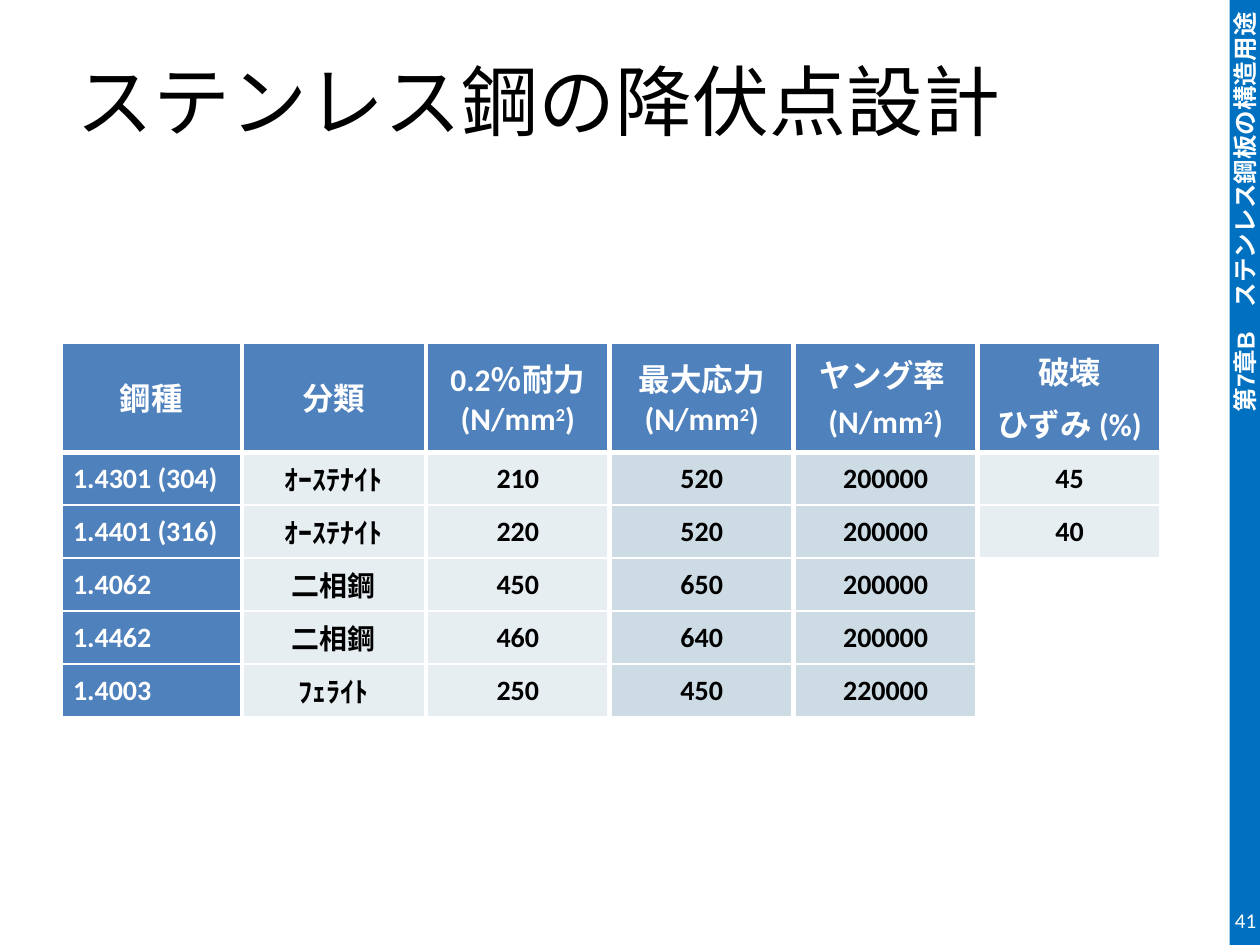
from lxml import etree
from pptx import Presentation
from pptx.dml.color import RGBColor
from pptx.enum.shapes import MSO_SHAPE
from pptx.enum.text import MSO_ANCHOR, PP_ALIGN
from pptx.oxml.ns import qn
from pptx.util import Inches, Pt

LEFT, CENTER, RIGHT = PP_ALIGN.LEFT, PP_ALIGN.CENTER, PP_ALIGN.RIGHT
MIDDLE = MSO_ANCHOR.MIDDLE
RECTANGLE = MSO_SHAPE.RECTANGLE

WHITE = RGBColor(0xFF, 0xFF, 0xFF)
BLACK = RGBColor(0x00, 0x00, 0x00)
SIDEBAR_BLUE = RGBColor(0x00, 0x70, 0xC0)
HEADER_BLUE = RGBColor(0x4F, 0x81, 0xBD)
PALE_BLUE = RGBColor(0xE7, 0xEE, 0xF2)
MID_BLUE = RGBColor(0xCC, 0xDB, 0xE4)

BODY_FONT = "Calibri"
SIDEBAR_FONT = "Arial"
JAPANESE_FONT = "Noto Sans CJK JP"

TITLE_ONLY_LAYOUT = 5
THICK, THIN = Pt(3), Pt(1)
COLUMN_WIDTHS = [1.44] + [1.46] * 5
HEADER_HEIGHT, ROW_HEIGHT = 0.87, 0.42
UNIT = [("(N/mm", None), ("2", 30000), (")", None)]

HEADERS = [
    [[("鋼種", None)]],
    [[("分類", None)]],
    [[("0.2％耐力", None), *UNIT]],
    [[("最大応力", None), *UNIT]],
    [[("ヤング率 ", None)], UNIT],
    [[("破壊", None)], [("ひずみ (%)", None)]],
]
STEELS = [
    ("1.4301 (304)", "ｵｰｽﾃﾅｲﾄ", "210", "520", "200000", "45"),
    ("1.4401 (316)", "ｵｰｽﾃﾅｲﾄ", "220", "520", "200000", "40"),
    ("1.4062", "二相鋼", "450", "650", "200000", ""),
    ("1.4462", "二相鋼", "460", "640", "200000", ""),
    ("1.4003", "ﾌｪﾗｲﾄ", "250", "450", "220000", ""),
]
COLUMN_FILLS = [HEADER_BLUE, PALE_BLUE, PALE_BLUE, MID_BLUE, MID_BLUE, PALE_BLUE]


def add_text(paragraph, text, font=BODY_FONT, size=16, color=BLACK, bold=False,
             align=LEFT, baseline=None):
    paragraph.alignment = align
    run = paragraph.add_run()
    run.text = text
    run.font.name = font
    run.font.size = Pt(size)
    run.font.bold = bold
    run.font.color.rgb = color
    properties = run.font._element
    etree.SubElement(properties, qn("a:ea"), typeface=JAPANESE_FONT)
    if baseline:
        properties.set("baseline", str(baseline))


def set_borders(cell, **widths):
    properties = cell._tc.get_or_add_tcPr()
    for position, side in enumerate(("lnL", "lnR", "lnT", "lnB")):
        line = etree.Element(qn(f"a:{side}"), w=str(widths.get(side, THICK)))
        fill = etree.SubElement(line, qn("a:solidFill"))
        etree.SubElement(fill, qn("a:srgbClr"), val=str(WHITE))
        properties.insert(position, line)


def fill_cell(cell, color):
    cell.fill.solid()
    cell.fill.fore_color.rgb = color
    cell.vertical_anchor = MIDDLE


def add_sidebar(slide, left, top, width, height):
    sidebar = slide.shapes.add_shape(RECTANGLE, left, top, width, height)
    sidebar.shadow.inherit = False
    sidebar.fill.solid()
    sidebar.fill.fore_color.rgb = SIDEBAR_BLUE
    sidebar.line.fill.background()
    frame = sidebar.text_frame
    frame.vertical_anchor = MIDDLE
    frame._txBody.bodyPr.set("vert", "vert270")
    add_text(frame.paragraphs[0], "第7章B　ステンレス鋼板の構造用途", font=SIDEBAR_FONT,
             size=14, color=WHITE, bold=True, align=RIGHT)


def add_title(slide, left, top, width, height):
    title = slide.shapes.title
    title.left, title.top, title.width, title.height = left, top, width, height
    title.text_frame.vertical_anchor = MIDDLE
    paragraph = title.text_frame.paragraphs[0]
    paragraph.line_spacing = 0.9
    add_text(paragraph, "ステンレス鋼の降伏点設計", font=JAPANESE_FONT, size=44)


def fill_header(cell, lines):
    fill_cell(cell, HEADER_BLUE)
    set_borders(cell)
    frame = cell.text_frame
    for index, parts in enumerate(lines):
        paragraph = frame.add_paragraph() if index else frame.paragraphs[0]
        if index:
            paragraph.space_before = Pt(4)
        for text, baseline in parts:
            add_text(paragraph, text, size=18, color=WHITE, bold=True,
                     align=CENTER, baseline=baseline)


def add_steel_table(slide, left, top):
    row_heights = [HEADER_HEIGHT] + [ROW_HEIGHT] * len(STEELS)
    table = slide.shapes.add_table(
        len(row_heights), len(COLUMN_WIDTHS), left, top,
        Inches(sum(COLUMN_WIDTHS)), Inches(sum(row_heights))).table
    for column, width in zip(table.columns, COLUMN_WIDTHS):
        column.width = Inches(width)
    for row, height in zip(table.rows, row_heights):
        row.height = Inches(height)
    for column, lines in enumerate(HEADERS):
        fill_header(table.cell(0, column), lines)
    for row, steel in enumerate(STEELS, start=1):
        for column, text in enumerate(steel):
            cell = table.cell(row, column)
            fill_cell(cell, COLUMN_FILLS[column] if text else WHITE)
            set_borders(cell, lnT=THICK if row == 1 else THIN, lnB=THIN)
            if text:
                add_text(cell.text_frame.paragraphs[0], text, bold=True,
                         color=BLACK if column else WHITE,
                         align=CENTER if column else LEFT)


def add_page_number(slide, left, top, width, height):
    frame = slide.shapes.add_textbox(left, top, width, height).text_frame
    frame.word_wrap = True
    frame.vertical_anchor = MIDDLE
    frame.margin_left = frame.margin_right = 0
    frame.margin_top = frame.margin_bottom = 0
    add_text(frame.paragraphs[0], "41", size=12, color=WHITE, align=RIGHT)


def main():
    presentation = Presentation()
    presentation.slide_width = Inches(10)
    presentation.slide_height = Inches(7.5)
    slide = presentation.slides.add_slide(presentation.slide_layouts[TITLE_ONLY_LAYOUT])
    add_sidebar(slide, Inches(9.76), Inches(0), Inches(0.24), Inches(7.5))
    add_title(slide, Inches(0.51), Inches(0.2), Inches(9), Inches(1.28))
    add_steel_table(slide, Inches(0.48), Inches(2.71))
    add_page_number(slide, Inches(9.5), Inches(7.1), Inches(0.47), Inches(0.4))
    presentation.save("out.pptx")


if __name__ == "__main__":
    main()
